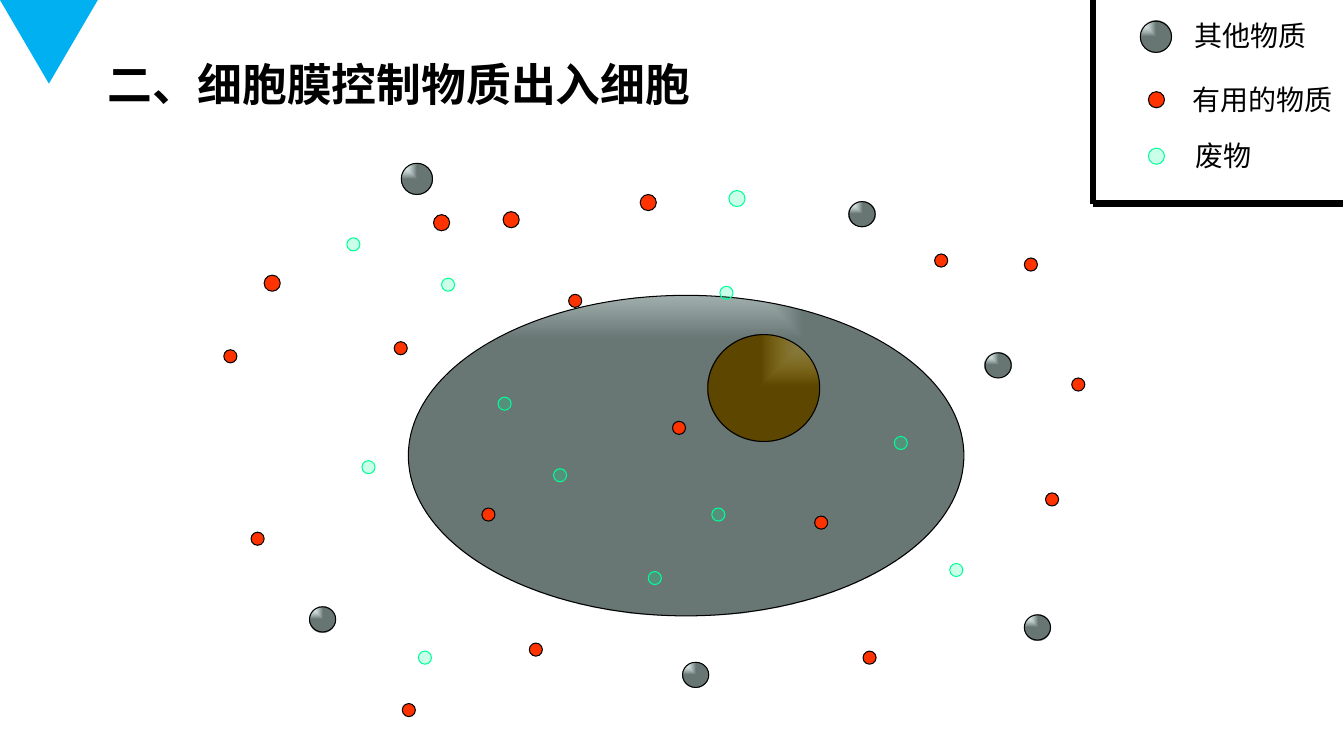
from collections import namedtuple

from lxml import etree
from pptx import Presentation
from pptx.dml.color import RGBColor
from pptx.enum.shapes import MSO_CONNECTOR, MSO_SHAPE
from pptx.enum.text import MSO_AUTO_SIZE, PP_ALIGN
from pptx.oxml.ns import qn
from pptx.util import Pt

OVAL = MSO_SHAPE.OVAL
TRIANGLE = MSO_SHAPE.ISOSCELES_TRIANGLE
STRAIGHT = MSO_CONNECTOR.STRAIGHT
GROW = MSO_AUTO_SIZE.SHAPE_TO_FIT_TEXT
LEFT, CENTER = PP_ALIGN.LEFT, PP_ALIGN.CENTER

BLACK = RGBColor(0x00, 0x00, 0x00)
SKY = RGBColor(0x00, 0xB0, 0xF0)
RED = RGBColor(0xFF, 0x33, 0x00)
MINT = RGBColor(0x00, 0xFF, 0x99)
PALE = RGBColor(0xE1, 0xFF, 0xFB)
SLATE = RGBColor(0x68, 0x76, 0x74)
GOLD = RGBColor(0xCC, 0x99, 0x00)
BROWN = RGBColor(0x5E, 0x47, 0x00)

FONT = "Arial"
PX = 9144
Box = namedtuple("Box", "left top width height")
Look = namedtuple("Look", "fill line alpha glow corner", defaults=(None, None, None))

OTHER = Look(SLATE, BLACK, glow=PALE, corner="left")
USEFUL = Look(RED, BLACK)
WASTE = Look(MINT, MINT, alpha=20)
NUCLEUS = Look(BROWN, BLACK, glow=GOLD, corner="right")

PARTICLES = [
    (OTHER, 26, 25, [(307, 602), (677, 657), (977, 350), (842, 200), (1016, 610)]),
    (OTHER, 31, 31, [(398, 162)]),
    (USEFUL, 13, 13, [
        (249, 528), (856, 646), (1063, 375), (391, 339), (478, 504),
        (808, 512), (667, 418), (564, 292), (399, 698), (1037, 489),
        (1016, 256), (927, 252), (222, 347), (525, 638)]),
    (USEFUL, 16, 16, [(635, 193), (430, 213), (262, 273), (499, 210)]),
    (WASTE, 13, 13, [
        (494, 394), (359, 457), (887, 433), (643, 567), (438, 276),
        (714, 284), (415, 646), (942, 559), (344, 236), (549, 465),
        (706, 504)]),
    (WASTE, 16, 16, [(723, 189)]),
]

LEGEND = [
    (OTHER, Box(47, 21, 31, 31), "其他物质", Box(90, 13, 132, 43)),
    (USEFUL, Box(55, 91, 16, 16), "有用的物质", Box(88, 77, 160, 43)),
    (WASTE, Box(55, 147, 16, 16), "废物", Box(92, 132, 76, 43)),
]


def inside(region, part):
    return Box(region.left + part.left, region.top + part.top, part.width, part.height)


def emu(box):
    return [length * PX for length in box]


def set_alpha(color, percent):
    etree.SubElement(color, qn("a:alpha")).set("val", str(percent * 1000))


def set_glow(shape, look):
    properties = shape._element.spPr
    gradient = etree.Element(qn("a:gradFill"), rotWithShape="1")
    stops = etree.SubElement(gradient, qn("a:gsLst"))
    for position, color, alpha in ((0, look.glow, 20), (100, look.fill, 100)):
        stop = etree.SubElement(stops, qn("a:gs"), pos=str(position * 1000))
        tone = etree.SubElement(stop, qn("a:srgbClr"), val=str(color))
        if alpha < 100:
            set_alpha(tone, alpha)
    burst = etree.SubElement(gradient, qn("a:path"))
    burst.set("path", "rect")
    far_side = "r" if look.corner == "left" else "l"
    etree.SubElement(burst, qn("a:fillToRect"), {far_side: "100000", "b": "100000"})
    properties.replace(properties.find(qn("a:solidFill")), gradient)


def add_oval(page, box, look):
    oval = page.shapes.add_shape(OVAL, *emu(box))
    oval.shadow.inherit = False
    oval.fill.solid()
    oval.fill.fore_color.rgb = look.fill
    oval.line.color.rgb = look.line
    oval.line.width = Pt(0.75)
    if look.alpha:
        fill = oval._element.spPr.find(qn("a:solidFill"))
        set_alpha(fill[0], look.alpha)
    if look.glow:
        set_glow(oval, look)


def add_text(page, box, text, size=20, bold=False, align=CENTER):
    label = page.shapes.add_textbox(*emu(box))
    frame = label.text_frame
    frame.word_wrap = False
    frame.auto_size = GROW
    para = frame.paragraphs[0]
    para.alignment = align
    span = para.add_run()
    span.text = text
    span.font.name = FONT
    span.font.size = Pt(size)
    span.font.bold = bold
    span.font.color.rgb = BLACK


def add_line(page, start, end):
    line = page.shapes.add_connector(STRAIGHT, *emu(start + end))
    line.line.color.rgb = BLACK
    line.line.width = Pt(4.5)
    etree.SubElement(line._element.spPr, qn("a:effectLst"))


def draw_heading(page, box):
    corner = page.shapes.add_shape(TRIANGLE, *emu(Box(box.left, box.top, 97, 83)))
    corner.rotation = 180
    corner.shadow.inherit = False
    corner.fill.solid()
    corner.fill.fore_color.rgb = SKY
    corner.line.fill.background()
    add_text(page, inside(box, Box(97, 51, 630, 64)), "二、细胞膜控制物质出入细胞",
             size=32, bold=True, align=LEFT)


def draw_cell(page, box):
    add_oval(page, box, OTHER)
    add_oval(page, inside(box, Box(297, 39, 111, 106)), NUCLEUS)


def draw_particles(page, box):
    for look, width, height, places in PARTICLES:
        for left, top in places:
            add_oval(page, inside(box, Box(left, top, width, height)), look)


def draw_legend(page, box):
    for look, marker, text, label in LEGEND:
        add_oval(page, inside(box, marker), look)
        add_text(page, inside(box, label), text)
    bottom = box.top + box.height
    add_line(page, (box.left, box.top), (box.left, bottom))
    add_line(page, (box.left, bottom), (box.left + box.width, bottom))


def main():
    deck = Presentation()
    deck.slide_width, deck.slide_height = 1333 * PX, 750 * PX
    page = deck.slides.add_slide(deck.slide_layouts[6])
    draw_heading(page, Box(0, 0, 727, 115))
    draw_cell(page, Box(405, 293, 551, 318))
    draw_particles(page, Box(0, 0, 1333, 750))
    draw_legend(page, Box(1084, 0, 248, 202))
    deck.save("out.pptx")


if __name__ == "__main__":
    main()
